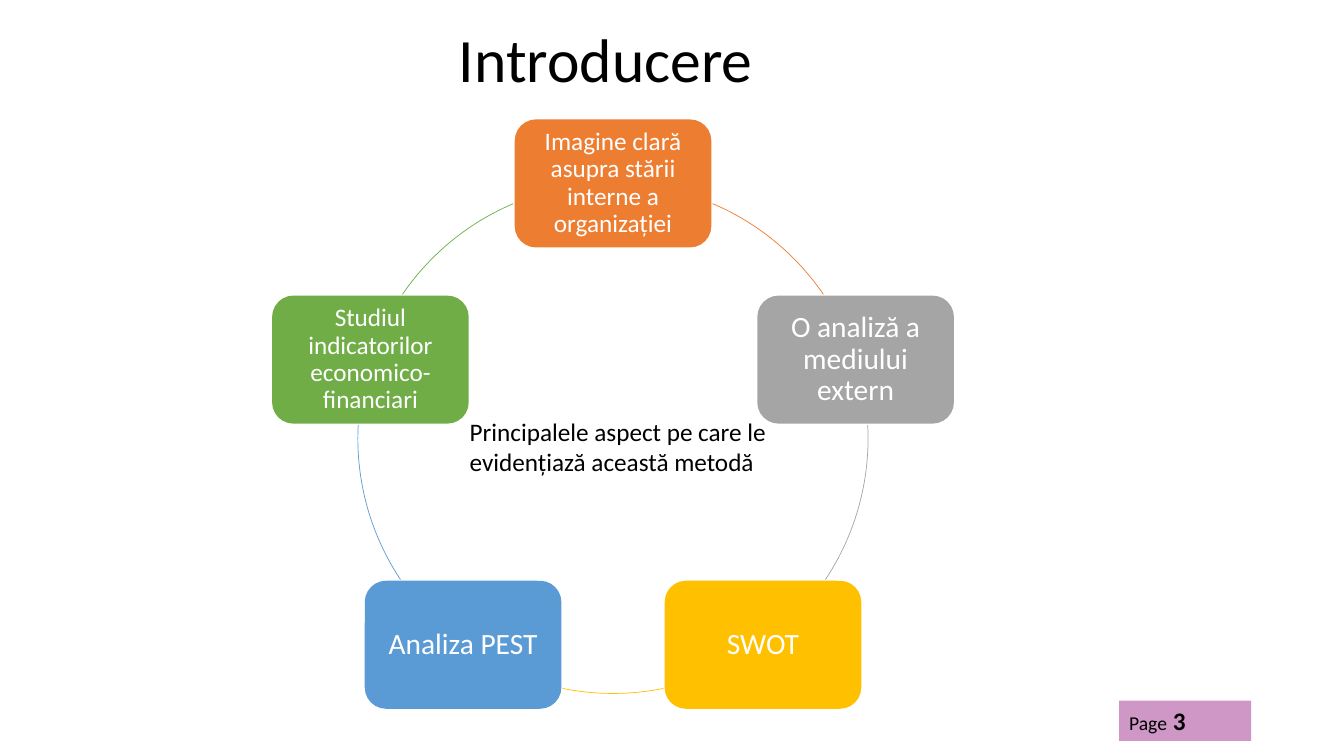
"""Build the introduction slide: five topics on a ring around a caption."""
from math import cos, radians, sin

from lxml import etree
from pptx import Presentation
from pptx.dml.color import RGBColor
from pptx.enum import shapes, text
from pptx.oxml import ns
from pptx.util import Inches, Pt

BLACK = RGBColor(0x00, 0x00, 0x00)
WHITE = RGBColor(0xFF, 0xFF, 0xFF)
PURPLE = RGBColor(0x9F, 0x31, 0x8D)
ORANGE = RGBColor(0xED, 0x7D, 0x31)
GRAY = RGBColor(0xA5, 0xA5, 0xA5)
GOLD = RGBColor(0xFF, 0xC0, 0x00)
BLUE = RGBColor(0x5B, 0x9B, 0xD5)
GREEN = RGBColor(0x70, 0xAD, 0x47)

TITLE = "Introducere"
CAPTION = "Principalele aspect pe care le evidențiază această metodă"
PAGE = [("Page", 14, False), (" 3", 18, True)]
# label, colour, text size, inset, start and end angle of the arc that follows
TOPICS = [
    ("Imagine clară asupra stării interne a organizației", ORANGE, 18, 0.07, 293, 325.6),
    ("O analiză a mediului extern", GRAY, 21, 0.09, 357, 33.6),
    ("SWOT", GOLD, 21, 0.09, 78.6, 101.4),
    ("Analiza PEST", BLUE, 21, 0.09, 146.4, 183),
    ("Studiul indicatorilor economico-financiari", GREEN, 18, 0.07, 214.4, 247),
]
MID_X, MID_Y, RADIUS = 6.08, 4.35, 2.53
NODE_W, NODE_H = 1.95, 1.27
MARGINS = ("margin_left", "margin_top", "margin_right", "margin_bottom")


def style(item, **values):
    """Set each given attribute on the item."""
    for name, value in values.items():
        setattr(item, name, value)


def write(par, words, size, color, bold=False):
    """Add one run of text to a paragraph."""
    run = par.add_run()
    run.text = words
    style(run.font, name="Calibri", size=Pt(size), bold=bold)
    run.font.color.rgb = color


def draw(slide, kind, box, color):
    """Add a flat filled shape without outline."""
    shape = slide.shapes.add_shape(kind, *map(Inches, box))
    shape.shadow.inherit = False
    shape.fill.solid()
    shape.fill.fore_color.rgb = color
    shape.line.fill.background()
    return shape


def add_topic(slide, index, label, color, size, inset, start, end):
    """Place one topic on the ring, with the arc to the next one."""
    angle = radians(72 * index - 90)
    left = MID_X + RADIUS * cos(angle) - NODE_W / 2
    top = MID_Y + RADIUS * sin(angle) - NODE_H / 2
    node = draw(slide, shapes.MSO_SHAPE.ROUNDED_RECTANGLE, (left, top, NODE_W, NODE_H), color)
    frame = node.text_frame
    style(frame, word_wrap=True, vertical_anchor=text.MSO_ANCHOR.MIDDLE,
          **dict.fromkeys(MARGINS, Inches(inset)))
    par = frame.paragraphs[0]
    style(par, alignment=text.PP_ALIGN.CENTER, line_spacing=0.9)
    write(par, label, size, WHITE)

    ring = (MID_X - RADIUS, MID_Y - RADIUS, 2 * RADIUS, 2 * RADIUS)
    arc = draw(slide, shapes.MSO_SHAPE.ARC, ring, color)
    arc.fill.background()
    arc.line.color.rgb = color
    arc.line.width = Pt(0.5)
    for spot, degrees in enumerate((start, end)):
        arc.adjustments[spot] = degrees * 0.6


def main():
    """Build and save the slide."""
    deck = Presentation()
    style(deck, slide_width=Inches(13.33), slide_height=Inches(7.5))
    slide = deck.slides.add_slide(deck.slide_layouts[5])

    title = slide.shapes.title
    style(title, left=Inches(0.26), top=Inches(0.15), width=Inches(11.5), height=Inches(0.94))
    title.text_frame.vertical_anchor = text.MSO_ANCHOR.MIDDLE
    par = title.text_frame.paragraphs[0]
    style(par, alignment=text.PP_ALIGN.CENTER, line_spacing=0.9)
    write(par, TITLE, 44, BLACK)

    badge = draw(slide, shapes.MSO_SHAPE.RECTANGLE, (11.1, 6.95, 1.31, 0.4), PURPLE)
    tint = badge.fill._xPr.find(".//" + ns.qn("a:srgbClr"))
    etree.SubElement(tint, ns.qn("a:alpha")).set("val", "50000")
    badge.text_frame.vertical_anchor = text.MSO_ANCHOR.TOP
    par = badge.text_frame.paragraphs[0]
    par.alignment = text.PP_ALIGN.LEFT
    for words, size, bold in PAGE:
        write(par, words, size, BLACK, bold)

    for index, topic in enumerate(TOPICS):
        add_topic(slide, index, *topic)

    box = slide.shapes.add_textbox(*map(Inches, (4.56, 4.08, 3.56, 0.71)))
    box.text_frame.word_wrap = True
    write(box.text_frame.paragraphs[0], CAPTION, 18, BLACK)

    deck.save("out.pptx")


if __name__ == "__main__":
    main()
